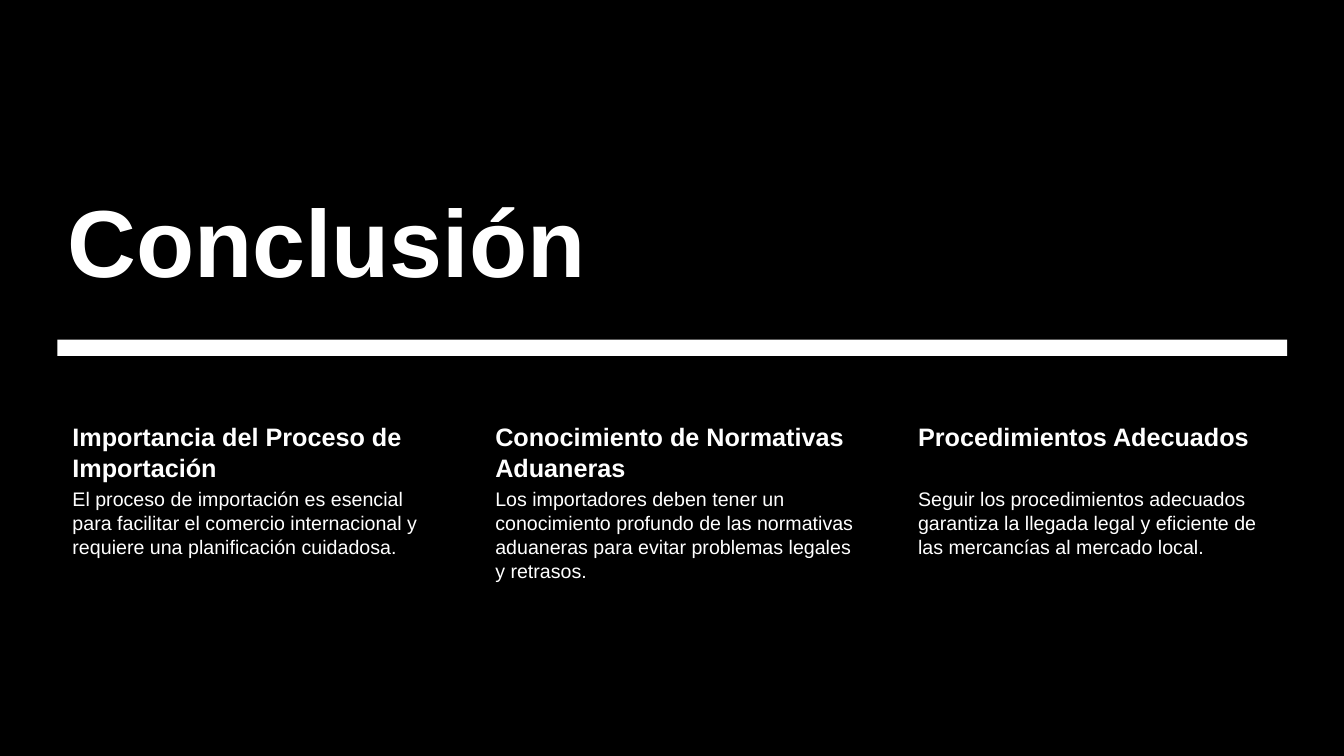
from dataclasses import dataclass

from pptx import Presentation
from pptx.dml.color import RGBColor
from pptx.enum.shapes import MSO_SHAPE as Shape
from pptx.enum.text import MSO_ANCHOR as Anchor, MSO_AUTO_SIZE as AutoSize, PP_ALIGN as Align
from pptx.util import Pt

FONT, BLACK, WHITE = "Arial", "000000", "FFFFFF"
WIDTH, HEIGHT = 960, 540
LEFT, SPAN = 41, 878.4
COL_WIDTH, COL_STEP = 274.4, 302
HEAD_TOP, HEAD_HEIGHT, BODY_HEIGHT = 298, 47.6, 147


@dataclass
class Column:
    heading: str
    body: str


COLUMNS = [
    Column("Importancia del Proceso de Importación",
           "El proceso de importación es esencial para facilitar el comercio "
           "internacional y requiere una planificación cuidadosa."),
    Column("Conocimiento de Normativas Aduaneras",
           "Los importadores deben tener un conocimiento profundo de las normativas "
           "aduaneras para evitar problemas legales y retrasos."),
    Column("Procedimientos Adecuados",
           "Seguir los procedimientos adecuados garantiza la llegada legal y "
           "eficiente de las mercancías al mercado local."),
]


def set_fill(fill, color: str) -> None:
    fill.solid()
    fill.fore_color.rgb = RGBColor.from_string(color)


def add_bar(s, left: float, top: float, width: float, height: float, color: str) -> None:
    sp = s.shapes.add_shape(Shape.RECTANGLE, Pt(left), Pt(top), Pt(width), Pt(height))
    sp.shadow.inherit = False
    set_fill(sp.fill, color)
    sp.line.fill.background()


def write(tf, text: str, *, size: float, bold: bool = False, anchor=Anchor.TOP,
          spacing: float = 1.0) -> None:
    tf.word_wrap = True
    tf.auto_size = AutoSize.NONE
    tf.vertical_anchor = anchor
    p = tf.paragraphs[0]
    p.alignment = Align.LEFT
    p.line_spacing = spacing
    r = p.add_run()
    r.text = text
    r.font.name, r.font.size, r.font.bold = FONT, Pt(size), bold
    r.font.color.rgb = RGBColor.from_string(WHITE)


def add_text(s, text: str, left: float, top: float, height: float, inset: float,
             **fmt) -> None:
    tf = s.shapes.add_textbox(Pt(left), Pt(top), Pt(COL_WIDTH), Pt(height)).text_frame
    tf.margin_left = Pt(10.8)
    tf.margin_top = tf.margin_right = tf.margin_bottom = Pt(inset)
    write(tf, text, spacing=1.03, **fmt)


def main() -> None:
    prs = Presentation()
    prs.slide_width, prs.slide_height = Pt(WIDTH), Pt(HEIGHT)
    s = prs.slides.add_slide(prs.slide_layouts.get_by_name("Title Only"))

    # Background and divider
    set_fill(s.background.fill, BLACK)
    add_bar(s, 0, 0, WIDTH, HEIGHT, BLACK)
    add_bar(s, LEFT, 242.5, SPAN, 11.7, WHITE)

    # Title, brought in front of the background
    title = s.shapes.title
    title.left, title.top, title.width, title.height = Pt(LEFT), Pt(104.4), Pt(SPAN), Pt(110.9)
    write(title.text_frame, "Conclusión", size=68, bold=True, anchor=Anchor.BOTTOM)
    s.shapes[-1].element.addnext(title.element)

    # Three columns
    for i, col in enumerate(COLUMNS):
        left = LEFT + i * COL_STEP
        add_text(s, col.heading, left, HEAD_TOP, HEAD_HEIGHT, 2, size=18, bold=True)
        add_text(s, col.body, left, HEAD_TOP + HEAD_HEIGHT, BODY_HEIGHT, 1.5, size=14)

    prs.save("out.pptx")


if __name__ == "__main__":
    main()
